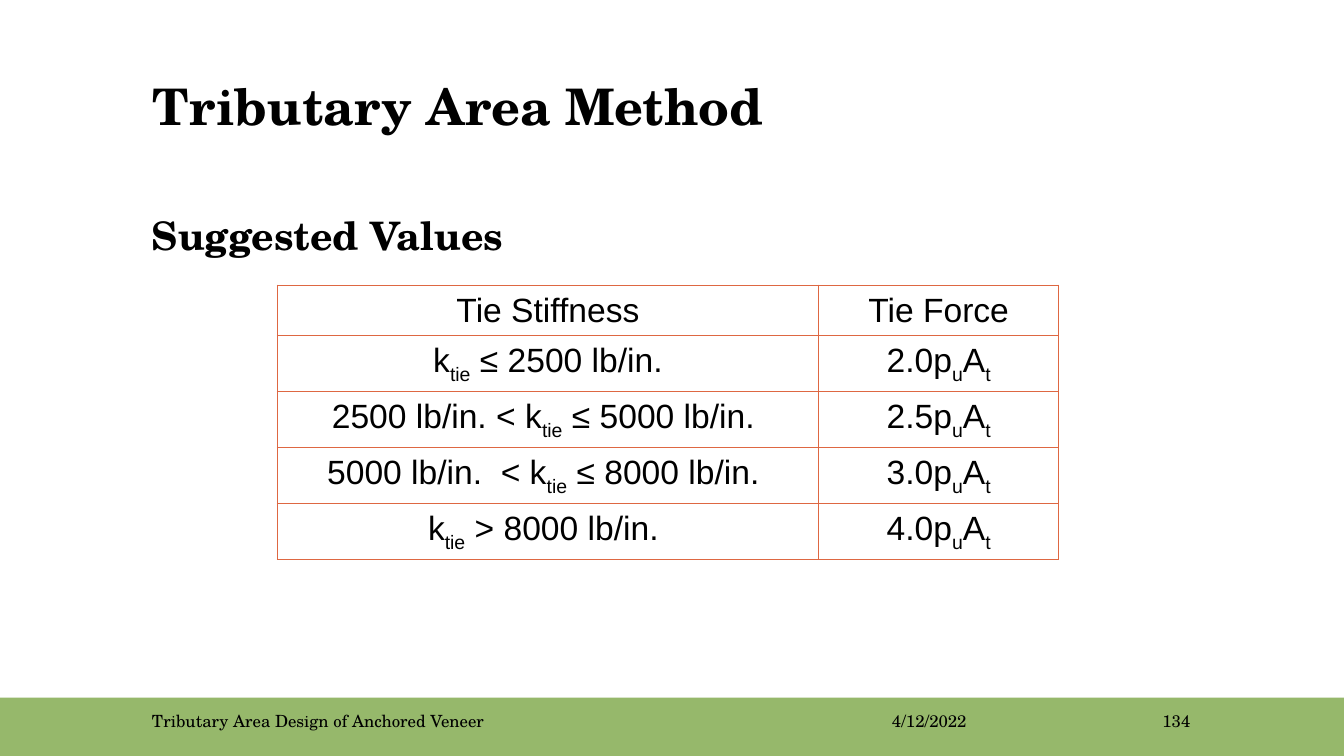
"""Builds the slide on suggested tie forces for the tributary area method."""
from lxml import etree
from pptx import Presentation
from pptx import util as u
from pptx.dml.color import RGBColor
from pptx.enum import shapes, text
from pptx.oxml.ns import qn

BLACK = RGBColor(0x00, 0x00, 0x00)
GREEN = RGBColor(0x96, 0xB8, 0x6B)
ORANGE = RGBColor(0xDE, 0x67, 0x42)
SERIF, SANS = "TeX Gyre Schola", "Arial"
LEFT, CONTENT_WIDTH = u.Cm(3.58), u.Cm(26.67)

TIE_FORCES = [
    ("Tie Stiffness", "Tie Force"),
    ("k|tie| ≤ 2500 lb/in.", "2.0p|u|A|t"),
    ("2500 lb/in. < k|tie| ≤ 5000 lb/in. ", "2.5p|u|A|t"),
    ("5000 lb/in.  < k|tie| ≤ 8000 lb/in. ", "3.0p|u|A|t"),
    ("k|tie| > 8000 lb/in. ", "4.0p|u|A|t"),
]


def style(paragraph, size, face, bold=False, align=text.PP_ALIGN.LEFT):
    """Set the font and alignment of a paragraph."""
    paragraph.alignment = align
    font = paragraph.font
    font.size, font.name, font.bold = u.Pt(size), face, bold
    font.color.rgb = BLACK


def add_line(slide, box, words, size, **look):
    """Add a one-line serif text box and return its frame."""
    frame = slide.shapes.add_textbox(*box).text_frame
    frame.word_wrap = True
    frame.text = words
    style(frame.paragraphs[0], size, SERIF, **look)
    return frame


def add_heading(slide, left, top, width):
    """Place the title and the subheading under it."""
    title = slide.shapes.title
    title.left, title.top, title.width, title.height = left, top, width, u.Cm(3.18)
    frame = title.text_frame
    frame.text = "Tributary Area Method"
    frame.vertical_anchor = text.MSO_ANCHOR.MIDDLE
    frame.margin_top = frame.margin_bottom = 0
    style(frame.paragraphs[0], 36, SERIF, bold=True)

    subheading = add_line(slide, (left, top + u.Cm(4.01), width, u.Cm(12.07)),
                          "Suggested Values", 28, bold=True)
    subheading.paragraphs[0].line_spacing = 1.1


def add_borders(cell):
    """Draw a thin orange line on every side of a cell."""
    properties = cell._tc.get_or_add_tcPr()
    for side in ("lnL", "lnR", "lnT", "lnB"):
        line = etree.SubElement(properties, qn(f"a:{side}"), w=str(u.Pt(1)))
        fill = etree.SubElement(line, qn("a:solidFill"))
        etree.SubElement(fill, qn("a:srgbClr"), val=str(ORANGE))


def fill_cell(cell, formula):
    """Write a formula whose every second part, split at bars, is a subscript."""
    add_borders(cell)
    cell.fill.background()
    cell.vertical_anchor = text.MSO_ANCHOR.MIDDLE
    paragraph = cell.text_frame.paragraphs[0]
    style(paragraph, 24, SANS, align=text.PP_ALIGN.CENTER)
    for index, part in enumerate(formula.split("|")):
        run = paragraph.add_run()
        run.text = part
        if index % 2:
            run._r.get_or_add_rPr().set("baseline", "-25000")


def add_tie_table(slide, left, top):
    """Place the table of tie stiffness ranges and tie forces."""
    widths = u.Cm(13.64), u.Cm(6.05)
    header_height, row_height = u.Cm(1.21), u.Cm(1.34)
    height = header_height + row_height * (len(TIE_FORCES) - 1)
    table = slide.shapes.add_table(len(TIE_FORCES), len(widths), left, top,
                                   sum(widths), height).table
    table.first_row = table.horz_banding = False
    for column, width in zip(table.columns, widths):
        column.width = width
    for index, formulas in enumerate(TIE_FORCES):
        table.rows[index].height = row_height if index else header_height
        for cell, formula in zip(table.rows[index].cells, formulas):
            fill_cell(cell, formula)


def add_footer(slide, top, width, height):
    """Place the green band with the talk name, date and slide number."""
    band = slide.shapes.add_shape(shapes.MSO_SHAPE.RECTANGLE, 0, top, width, height)
    band.shadow.inherit = False
    band.fill.solid()
    band.fill.fore_color.rgb = GREEN
    band.line.fill.background()
    entries = [
        ("Tributary Area Design of Anchored Veneer", LEFT, u.Cm(17.58), text.PP_ALIGN.LEFT),
        ("4/12/2022", u.Cm(22.23), u.Cm(3.66), text.PP_ALIGN.LEFT),
        ("134", u.Cm(26.87), u.Cm(3.38), text.PP_ALIGN.RIGHT),
    ]
    for words, left, entry_width, align in entries:
        box = left, top + u.Cm(0.2), entry_width, u.Cm(0.76)
        frame = add_line(slide, box, words, 12, align=align)
        frame.vertical_anchor = text.MSO_ANCHOR.MIDDLE


def main():
    """Build and save the presentation."""
    deck = Presentation()
    deck.slide_width, deck.slide_height = u.Cm(33.87), u.Cm(19.05)
    slide = deck.slides.add_slide(deck.slide_layouts[5])
    band_height = u.Cm(1.47)
    add_footer(slide, deck.slide_height - band_height, deck.slide_width, band_height)
    add_heading(slide, LEFT, u.Cm(1.07), CONTENT_WIDTH)
    add_tie_table(slide, u.Cm(6.99), u.Cm(7.19))
    deck.save("out.pptx")


if __name__ == "__main__":
    main()
